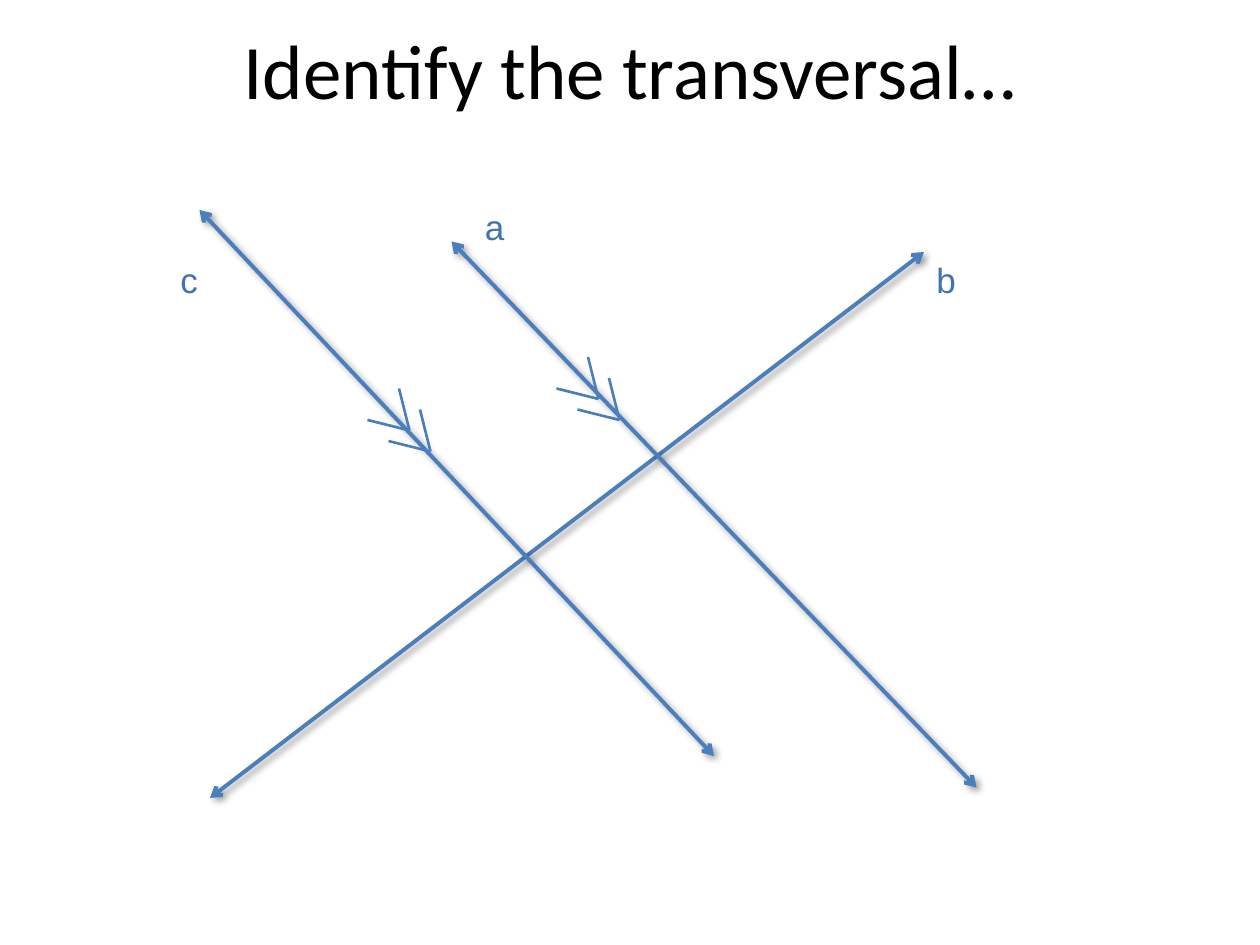
from lxml.etree import SubElement
from pptx import Presentation
from pptx.dml.color import RGBColor
from pptx.enum.shapes import MSO_CONNECTOR
from pptx.enum.text import MSO_ANCHOR, MSO_AUTO_SIZE, PP_ALIGN
from pptx.oxml.ns import qn
from pptx.util import Inches, Pt

LINE_BLUE = RGBColor(0x4B, 0x7E, 0xBC)
LABEL_BLUE = RGBColor(0x42, 0x74, 0xAF)
BLACK = RGBColor(0, 0, 0)

CELLS_PER_INCH = 12


def cells(count):
    """Length of a number of grid cells."""
    return Inches(count / CELLS_PER_INCH)


class GeometrySlide:
    """Draws titles, lines and labels on a grid of 120 columns by 90 rows."""

    def __init__(self, presentation):
        self.slide = presentation.slides.add_slide(presentation.slide_layouts[5])

    def style_text(self, paragraph, font_name, size, color):
        paragraph.font.name = font_name
        paragraph.font.size = Pt(size)
        paragraph.font.color.rgb = color

    def title(self, text, column, row, columns, rows):
        heading = self.slide.shapes.title
        heading.left, heading.top = cells(column), cells(row)
        heading.width, heading.height = cells(columns), cells(rows)
        heading.text_frame.text = text
        heading.text_frame.vertical_anchor = MSO_ANCHOR.MIDDLE
        paragraph = heading.text_frame.paragraphs[0]
        paragraph.alignment = PP_ALIGN.CENTER
        self.style_text(paragraph, "Calibri", 44, BLACK)

    def segment(self, start, end, width=1.5):
        """Plain line; returns its empty effect list and its line element."""
        segment = self.slide.shapes.add_connector(
            MSO_CONNECTOR.STRAIGHT, *map(cells, start + end))
        segment.line.color.rgb = LINE_BLUE
        segment.line.width = Pt(width)
        properties = segment._element.spPr
        effects = SubElement(properties, qn("a:effectLst"))
        return effects, properties.find(qn("a:ln"))

    def arrow_line(self, start, end):
        """Line with an arrowhead at each end and a soft shadow."""
        effects, outline = self.segment(start, end, width=2.25)
        for line_end in ("a:headEnd", "a:tailEnd"):
            SubElement(outline, qn(line_end), type="arrow")
        shadow = SubElement(effects, qn("a:outerShdw"), blurRad=str(Pt(4)),
                            dist=str(Pt(3)), dir=str(45 * 60000),
                            rotWithShape="0")
        shade = SubElement(shadow, qn("a:srgbClr"), val=str(BLACK))
        SubElement(shade, qn("a:alpha"), val="40000")

    def parallel_mark(self, column, row):
        """Two chevrons, the first with its tip at the given cell."""
        for step in (0, 2):
            x, y = column + step, row + step
            self.segment((x - 1, y - 4), (x, y))
            self.segment((x, y), (x - 4, y - 1))

    def label(self, text, column, row):
        box = self.slide.shapes.add_textbox(
            cells(column), cells(row), cells(4), cells(5.25))
        box.text_frame.word_wrap = True
        box.text_frame.auto_size = MSO_AUTO_SIZE.SHAPE_TO_FIT_TEXT
        box.text_frame.text = text
        self.style_text(box.text_frame.paragraphs[0], "Arial", 20, LABEL_BLUE)


def main():
    presentation = Presentation()
    presentation.slide_width, presentation.slide_height = Inches(10), Inches(7.5)
    diagram = GeometrySlide(presentation)

    diagram.title("Identify the transversal…", 6, -1, 108, 15)

    # Lines b, c and a
    for start, end in (((20, 76), (88, 24)),
                       ((19, 20), (68, 72)),
                       ((43, 23), (93, 75))):
        diagram.arrow_line(start, end)

    # Line names
    for name, column, row in (("a", 45, 19), ("b", 88, 24), ("c", 16, 24)):
        diagram.label(name, column, row)

    # Marks showing that c and a are parallel
    for column, row in ((39, 41), (57, 38)):
        diagram.parallel_mark(column, row)

    presentation.save("out.pptx")


if __name__ == "__main__":
    main()
